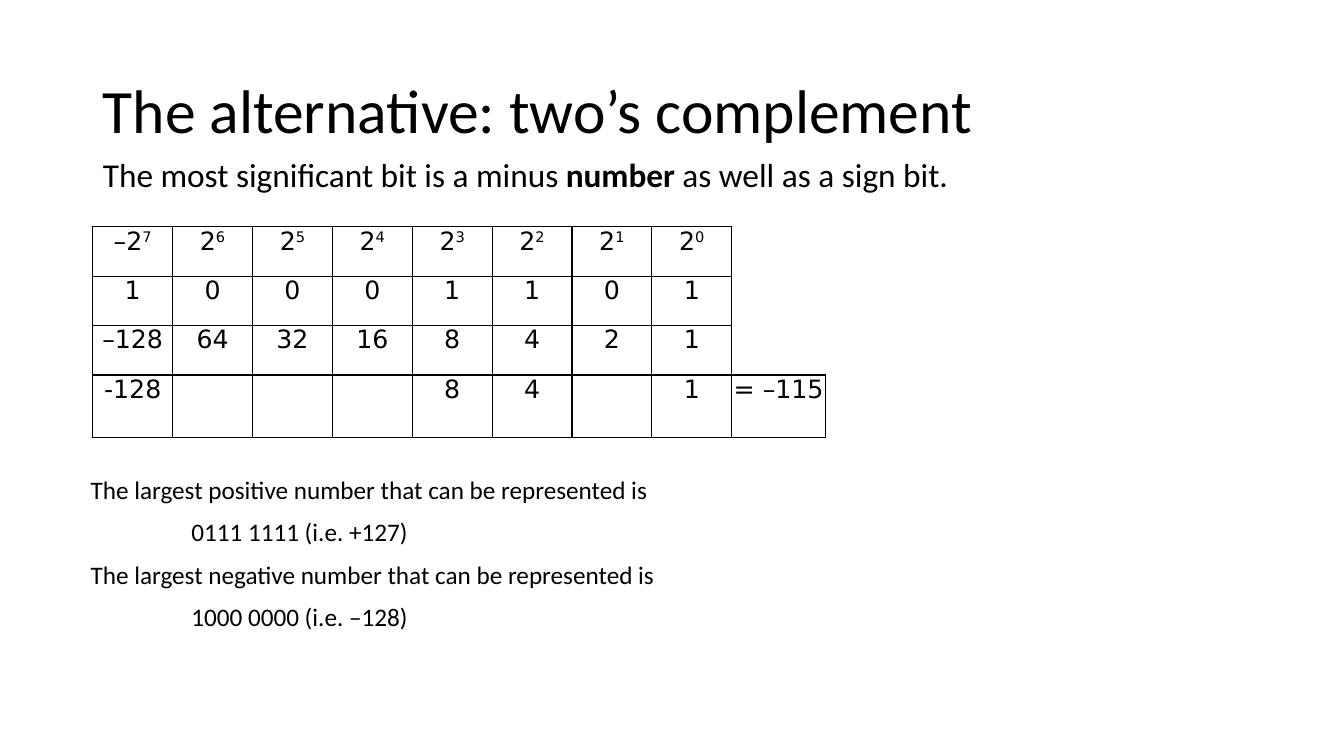
from dataclasses import dataclass

from lxml import etree
from pptx import Presentation
from pptx.dml.color import RGBColor
from pptx.enum.text import MSO_ANCHOR, MSO_AUTO_SIZE, PP_ALIGN
from pptx.oxml.ns import qn
from pptx.util import Inches, Pt

LEFT, CENTER = PP_ALIGN.LEFT, PP_ALIGN.CENTER
TOP, MIDDLE = MSO_ANCHOR.TOP, MSO_ANCHOR.MIDDLE
NO_AUTOFIT = MSO_AUTO_SIZE.NONE

COLORS = {"ink": "000000"}
BODY_FONT, TABLE_FONT = "Calibri", "DejaVu Sans"
THIN, THICK = 1, 2.25
BIT_COUNT = 8
BITS_WIDTH, RESULT_WIDTH = 6.34, 0.93
ROW_HEIGHTS = [0.49, 0.49, 0.49, 0.62]


@dataclass
class Run:
    text: str
    bold: bool = False
    superscript: bool = False


@dataclass
class Line:
    text: str
    indent: float = 0


POWERS = [[Run("–2" if n == BIT_COUNT - 1 else "2"), Run(str(n), superscript=True)]
          for n in reversed(range(BIT_COUNT))]
VALUES = [
    ["1", "0", "0", "0", "1", "1", "0", "1"],
    ["–128", "64", "32", "16", "8", "4", "2", "1"],
    ["-128", "", "", "", "8", "4", "", "1", "= –115"],
]
ROWS = [POWERS] + [[[Run(v)] if v else [] for v in row] for row in VALUES]
LIMITS = [
    Line("The largest positive number that can be represented is"),
    Line("0111 1111 (i.e. +127)", 1),
    Line("The largest negative number that can be represented is"),
    Line("1000 0000 (i.e. –128)", 1),
]


def add_runs(p, runs: list[Run], size: float, font: str = BODY_FONT) -> None:
    for run in runs:
        r = p.add_run()
        r.text = run.text
        r.font.size = Pt(size)
        r.font.name = font
        r.font.bold = run.bold
        r.font.color.rgb = RGBColor.from_string(COLORS["ink"])
        if run.superscript:
            r.font._element.set("baseline", "30000")


def place(sp, left: float, top: float, width: float, height: float) -> None:
    sp.left, sp.top = Inches(left), Inches(top)
    sp.width, sp.height = Inches(width), Inches(height)


def fill_placeholder(sp, runs: list[Run], size: float, anchor, spacing: float):
    tf = sp.text_frame
    tf.word_wrap = True
    tf.auto_size = NO_AUTOFIT
    tf.vertical_anchor = anchor
    p = tf.paragraphs[0]
    p.alignment = LEFT
    p.line_spacing = spacing
    add_runs(p, runs, size)
    return p


def set_borders(cell, widths: dict[str, float]) -> None:
    tc_pr = cell._tc.get_or_add_tcPr()
    for i, side in enumerate("LRTB"):
        ln = etree.Element(qn(f"a:ln{side}"))
        if side in widths:
            ln.set("w", str(Pt(widths[side])))
            fill = etree.SubElement(ln, qn("a:solidFill"))
            etree.SubElement(fill, qn("a:srgbClr")).set("val", COLORS["ink"])
        else:
            etree.SubElement(ln, qn("a:noFill"))
        tc_pr.insert(i, ln)


def border_widths(row: int, col: int) -> dict[str, float]:
    last = len(ROWS) - 1
    bottom = THICK if row == last - 1 else THIN
    if col < BIT_COUNT or row == last:
        return {"L": THIN, "R": THIN, "T": THICK if row == last else THIN, "B": bottom}
    return {"L": THIN, "B": bottom} if bottom == THICK else {"L": THIN}


def add_bit_table(slide) -> None:
    frame = slide.shapes.add_table(
        len(ROWS), BIT_COUNT + 1, Inches(0.92), Inches(2.25),
        Inches(BITS_WIDTH + RESULT_WIDTH), Inches(sum(ROW_HEIGHTS)))
    table = frame.table
    table.first_row = table.horz_banding = False
    for c, column in enumerate(table.columns):
        column.width = Inches(BITS_WIDTH / BIT_COUNT if c < BIT_COUNT else RESULT_WIDTH)
    for r, height in enumerate(ROW_HEIGHTS):
        table.rows[r].height = Inches(height)
        for c in range(BIT_COUNT + 1):
            cell = table.cell(r, c)
            cell.margin_left = cell.margin_right = 0
            cell.margin_top = cell.margin_bottom = 0
            cell.fill.background()
            set_borders(cell, border_widths(r, c))
            if c < len(ROWS[r]):
                p = cell.text_frame.paragraphs[0]
                p.alignment = CENTER
                add_runs(p, ROWS[r][c], 18, TABLE_FONT)


def add_limits(slide) -> None:
    box = slide.shapes.add_textbox(Inches(0.8), Inches(4.66), Inches(6.67), Inches(1.77))
    tf = box.text_frame
    tf.word_wrap = True
    for i, line in enumerate(LIMITS):
        p = tf.add_paragraph() if i else tf.paragraphs[0]
        p.space_before = Pt(8.5)
        p._p.get_or_add_pPr().set("marL", str(Inches(line.indent)))
        add_runs(p, [Run(line.text)], 18)


def main() -> None:
    prs = Presentation()
    prs.slide_width, prs.slide_height = Inches(13.33), Inches(7.5)
    slide = prs.slides.add_slide(prs.slide_layouts[1])
    title, body = slide.placeholders

    place(title, 0.92, 0.4, 11.5, 1.45)
    fill_placeholder(title, [Run("The alternative: two’s complement")], 44, MIDDLE, 0.9)

    place(body, 0.92, 1.56, 9.22, 0.58)
    p = fill_placeholder(body, [
        Run("The most significant bit is a minus "),
        Run("number", bold=True),
        Run(" as well as a sign bit."),
    ], 23.8, TOP, 0.8)
    p.space_before = Pt(10)
    p_pr = p._p.get_or_add_pPr()
    p_pr.set("marL", "0")
    p_pr.set("indent", "0")
    etree.SubElement(p_pr, qn("a:buNone"))

    add_bit_table(slide)
    add_limits(slide)
    prs.save("out.pptx")


if __name__ == "__main__":
    main()
